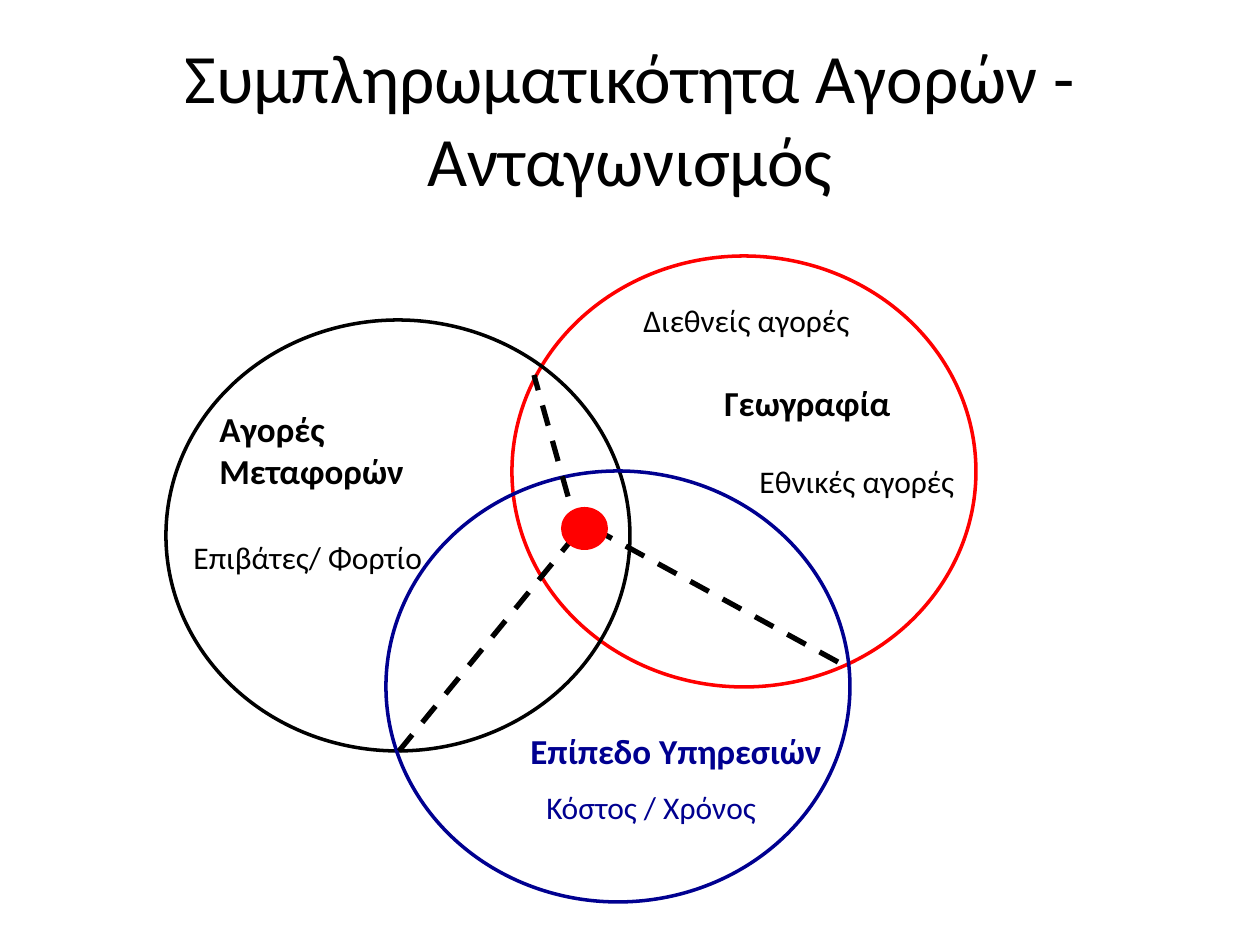
import pptx
import pptx.dml.color
import pptx.enum.dml
import pptx.enum.shapes
import pptx.enum.text
import pptx.oxml.ns
import pptx.util
from lxml import etree

EMU_PER_PX = 914400 / 126
FONT = "Calibri"
BLACK, RED, NAVY = "000000", "FF0000", "000090"


def px(length):
    return pptx.util.Emu(round(length * EMU_PER_PX))


def color(hex_string):
    return pptx.dml.color.RGBColor.from_string(hex_string)


def add_text(slide, box, text, size, hex_string, bold=False, wrap=False, centered=False):
    frame = slide.shapes.add_textbox(*map(px, box)).text_frame
    frame.word_wrap = wrap
    paragraph = frame.paragraphs[0]
    if centered:
        frame.vertical_anchor = pptx.enum.text.MSO_ANCHOR.MIDDLE
        paragraph.alignment = pptx.enum.text.PP_ALIGN.CENTER
    run = paragraph.add_run()
    run.text = text
    run.font.name = FONT
    run.font.size = pptx.util.Pt(size)
    run.font.bold = bold
    run.font.color.rgb = color(hex_string)


def add_ellipse(slide, box, fill=None, line=None):
    shape = slide.shapes.add_shape(pptx.enum.shapes.MSO_SHAPE.OVAL, *map(px, box))
    shape.shadow.inherit = False
    if fill:
        shape.fill.solid()
        shape.fill.fore_color.rgb = color(fill)
    else:
        shape.fill.background()
    if line:
        shape.line.color.rgb = color(line)
        shape.line.width = pptx.util.Pt(2)
    else:
        shape.line.fill.background()


def add_dashed_line(slide, start, end):
    connector = slide.shapes.add_connector(
        pptx.enum.shapes.MSO_CONNECTOR.STRAIGHT, *map(px, start + end))
    connector.line.color.rgb = color(BLACK)
    connector.line.width = pptx.util.Pt(3)
    connector.line.dash_style = pptx.enum.dml.MSO_LINE.DASH
    etree.SubElement(connector._element.spPr, pptx.oxml.ns.qn("a:effectLst"))


def add_title(slide, box):
    add_text(slide, box, "Συμπληρωματικότητα Αγορών - Ανταγωνισμός", 39.6, BLACK,
             wrap=True, centered=True)


def add_market_circles(slide, left, top):
    # Three overlapping circles of one size
    for x, y, line in [(346, 0, RED), (0, 64, BLACK), (220, 215, NAVY)]:
        add_ellipse(slide, (left + x, top + y, 464, 431), line=line)

    # Circle headings
    headings = [
        (41, 145, 305, 97, "Αγορές Μεταφορών", BLACK, True),
        (546, 119, 193, 55, "Γεωγραφία", BLACK, False),
        (352, 467, 320, 55, "Επίπεδο Υπηρεσιών", NAVY, False),
    ]
    for x, y, width, height, text, hex_string, wrap in headings:
        add_text(slide, (left + x, top + y, width, height), text, 20, hex_string,
                 bold=True, wrap=wrap)

    # Details inside the circles
    details = [
        (465, 39, 234, "Διεθνείς αγορές", BLACK),
        (581, 200, 223, "Εθνικές αγορές", BLACK),
        (368, 526, 238, "Κόστος / Χρόνος", NAVY),
        (15, 276, 257, "Επιβάτες/ Φορτίο", BLACK),
    ]
    for x, y, width, text, hex_string in details:
        add_text(slide, (left + x, top + y, width, 50), text, 18, hex_string)

    # Dashed lines from the crossings to the shared centre
    for x1, y1, x2, y2 in [(233, 495, 412, 276), (672, 406, 434, 276), (412, 276, 368, 119)]:
        add_dashed_line(slide, (left + x1, top + y1), (left + x2, top + y2))

    # Shared centre
    add_ellipse(slide, (left + 395, top + 251, 47, 43), fill=RED)


def main():
    presentation = pptx.Presentation()
    presentation.slide_width = px(1260)
    presentation.slide_height = px(945)
    slide = presentation.slides.add_slide(presentation.slide_layouts[6])
    add_title(slide, (63, 38, 1134, 158))
    add_market_circles(slide, 166, 256)
    presentation.save("out.pptx")


if __name__ == "__main__":
    main()
